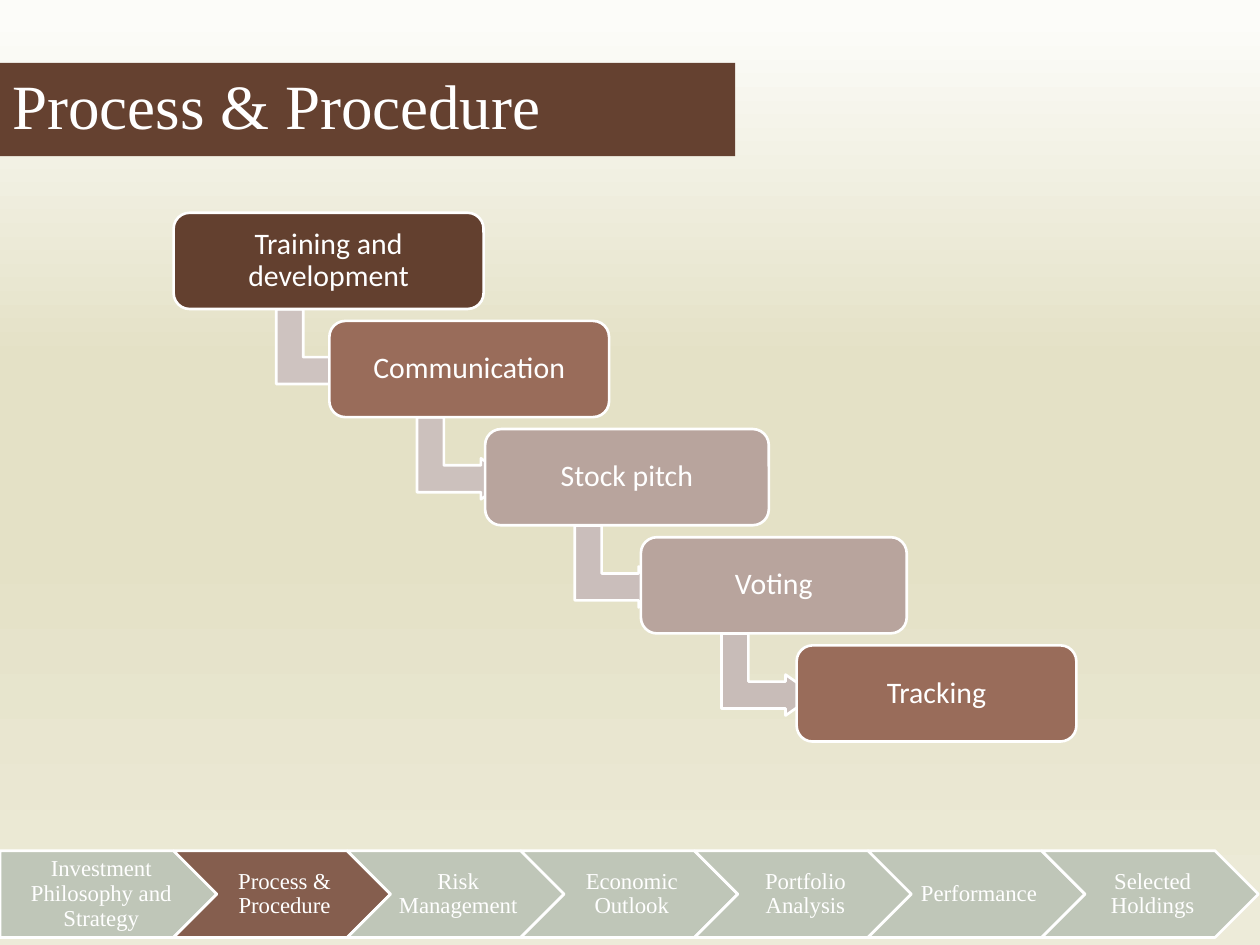
from copy import deepcopy

from pptx import Presentation
from pptx.dml.color import RGBColor
from pptx.enum.shapes import MSO_SHAPE
from pptx.enum.text import MSO_ANCHOR, PP_ALIGN
from pptx.oxml.ns import qn
from pptx.util import Cm, Pt

RECTANGLE = MSO_SHAPE.RECTANGLE
ROUNDED = MSO_SHAPE.ROUNDED_RECTANGLE
BENT_ARROW = MSO_SHAPE.BENT_UP_ARROW
PENTAGON = MSO_SHAPE.PENTAGON
CHEVRON = MSO_SHAPE.CHEVRON
MIDDLE = MSO_ANCHOR.MIDDLE
LEFT = PP_ALIGN.LEFT
CENTER = PP_ALIGN.CENTER

WHITE = "FFFFFF"
SERIF = "Times New Roman"
SANS = "Calibri"

BACKGROUND_STOPS = [(2, "FCFCF9"), (38, "E4E1C6"), (57, "E4E1C6"), (100, "EDEBD9")]

STEPS = [
    ("Training and development", 6.25, "63402F", "CEC3C0"),
    ("Communication", 5.64, "996C5A", "CCC1BD"),
    ("Stock pitch", 5.72, "B8A49D", "CABEBB"),
    ("Voting", 5.36, "B8A49D", "C8BCB8"),
    ("Tracking", 5.64, "996C5A", None),
]

SECTIONS = [
    "Investment Philosophy and Strategy",
    "Process & Procedure",
    "Risk Management",
    "Economic Outlook",
    "Portfolio Analysis",
    "Performance",
    "Selected Holdings",
]
CURRENT_SECTION = "Process & Procedure"


def color(value):
    return RGBColor.from_string(value)


def set_all(target, values):
    for name, value in values.items():
        setattr(target, name, value)


def paint_background(page):
    fill = page.background.fill
    fill.gradient()
    fill.gradient_angle = 270
    stop_list = next(page._element.iter(qn("a:gsLst")))
    for _ in range(len(BACKGROUND_STOPS) - len(stop_list)):
        stop_list.append(deepcopy(stop_list[0]))
    for stop, (percent, value) in zip(fill.gradient_stops, BACKGROUND_STOPS):
        stop.position = percent / 100
        stop.color.rgb = color(value)


def add_box(shapes, kind, left, top, width, height, fill, outlined=True):
    box = shapes.add_shape(kind, Cm(left), Cm(top), Cm(width), Cm(height))
    box.shadow.inherit = False
    box.fill.solid()
    box.fill.fore_color.rgb = color(fill)
    if outlined:
        box.line.color.rgb = color(WHITE)
        box.line.width = Pt(1.5)
    else:
        box.line.fill.background()
    return box


def write_text(box, text, font, size, align=CENTER, insets=(0.25, 0.13, 0.25, 0.13)):
    frame = box.text_frame
    left, top, right, bottom = map(Cm, insets)
    set_all(frame, {
        "word_wrap": True,
        "vertical_anchor": MIDDLE,
        "margin_left": left,
        "margin_top": top,
        "margin_right": right,
        "margin_bottom": bottom,
    })
    para = frame.paragraphs[0]
    set_all(para, {"alignment": align, "line_spacing": 0.9})
    span = para.add_run()
    span.text = text
    set_all(span.font, {"name": font, "size": Pt(size)})
    span.font.color.rgb = color(WHITE)


def add_title(page):
    box = add_box(page.shapes, RECTANGLE, 0, 1.27, 14.82, 1.88, "654130", outlined=False)
    write_text(box, "Process & Procedure", SERIF, 36, align=LEFT)


def add_bent_arrow(shapes, left, top, fill):
    arrow = add_box(shapes, BENT_ARROW, left, top, 1.65, 1.88, fill)
    arrow.rotation = 90
    for index, value in enumerate((0.328, 0.25, 0.358)):
        arrow.adjustments[index] = value


def add_staircase(page):
    shapes = page.shapes.add_group_shape().shapes
    for index, (text, width, fill, arrow_fill) in enumerate(STEPS):
        left = 3.5 + 3.14 * index
        top = 4.29 + 2.18 * index
        if arrow_fill:
            add_bent_arrow(shapes, left + width / 2 - 0.94, top + 1.83, arrow_fill)
        box = add_box(shapes, ROUNDED, left, top, width, 1.94, fill)
        write_text(box, text, SANS, 17, insets=(0.18, 0.18, 0.18, 0.18))


def add_navigation(page):
    shapes = page.shapes.add_group_shape().shapes
    for index, text in enumerate(SECTIONS):
        kind, inset = (CHEVRON, 0.15) if index else (PENTAGON, 0.2)
        fill = "855E4E" if text == CURRENT_SECTION else "BFC6B8"
        box = add_box(shapes, kind, 3.5 * index, 17.15, 4.37, 1.75, fill)
        write_text(box, text, SERIF, 13, insets=(inset, 0.1, 0.05, 0.1))


def main():
    deck = Presentation()
    set_all(deck, {"slide_width": Cm(25.4), "slide_height": Cm(19.05)})
    page = deck.slides.add_slide(deck.slide_layouts[6])
    paint_background(page)
    add_staircase(page)
    add_title(page)
    add_navigation(page)
    deck.save("out.pptx")


if __name__ == "__main__":
    main()
